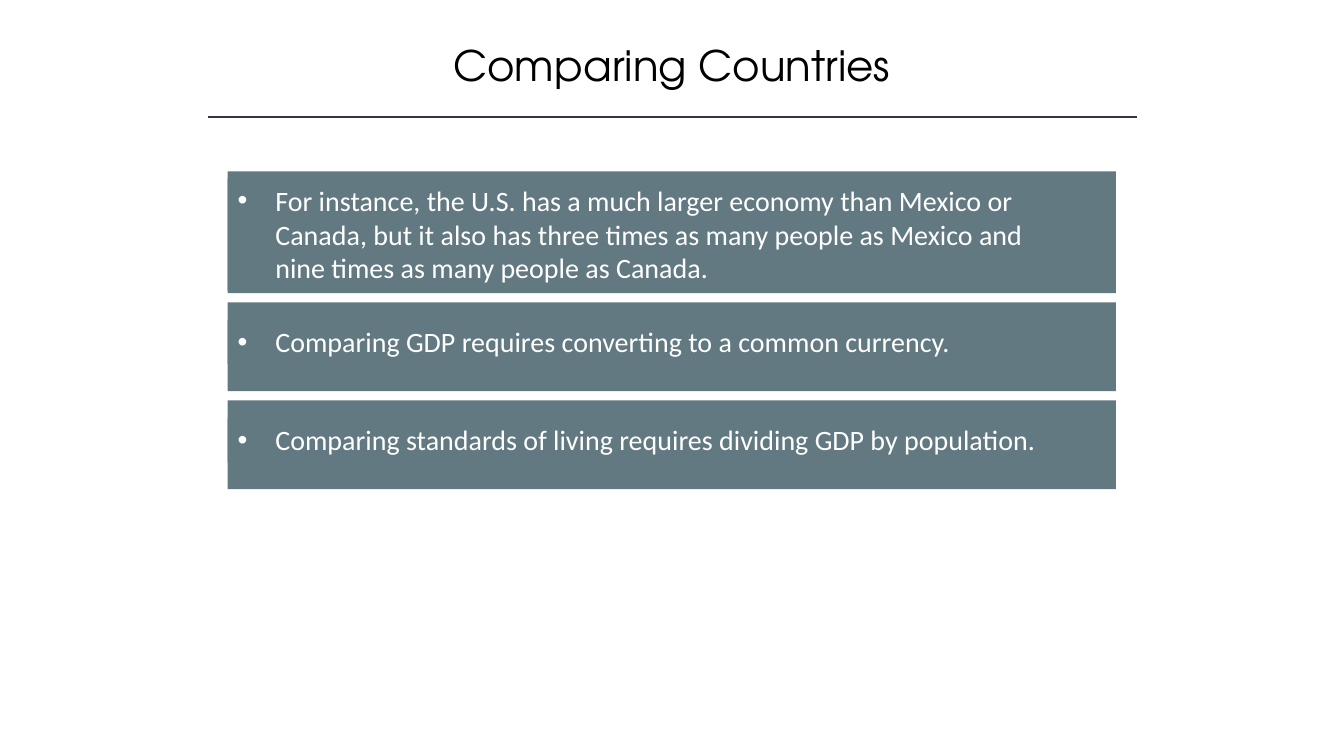
from lxml import etree
from pptx import Presentation
from pptx.dml.color import RGBColor
from pptx.enum.shapes import MSO_CONNECTOR, MSO_SHAPE
from pptx.enum.text import MSO_ANCHOR, PP_ALIGN
from pptx.oxml.ns import qn
from pptx.util import Cm, Pt

STRAIGHT = MSO_CONNECTOR.STRAIGHT
RECTANGLE = MSO_SHAPE.RECTANGLE
TOP, MIDDLE = MSO_ANCHOR.TOP, MSO_ANCHOR.MIDDLE
LEFT, CENTER = PP_ALIGN.LEFT, PP_ALIGN.CENTER
TITLE_ONLY = 5


def style_font(font, color, **formats):
    for attribute, value in formats.items():
        setattr(font, attribute, value)
    font.color.rgb = RGBColor.from_string(color)


def add_slate_rectangle(group, *box):
    rectangle = group.shapes.add_shape(RECTANGLE, *(Cm(n) for n in box))
    rectangle.shadow.inherit = False
    rectangle.fill.solid()
    rectangle.fill.fore_color.rgb = RGBColor.from_string("627981")
    rectangle.line.fill.background()
    return rectangle


deck = Presentation()
deck.slide_width, deck.slide_height = Cm(33.87), Cm(19.05)
slide = deck.slides.add_slide(deck.slide_layouts[TITLE_ONLY])

heading = slide.shapes.title
heading.left, heading.top, heading.width, heading.height = Cm(4.23), Cm(0.86), Cm(25.4), Cm(1.55)
heading.text_frame.text = "Comparing Countries"
heading.text_frame.vertical_anchor = MIDDLE
heading_line = heading.text_frame.paragraphs[0]
heading_line.alignment = CENTER
style_font(heading_line.font, "000000", name="TeX Gyre Adventor", size=Pt(30))

divider = slide.shapes.add_connector(STRAIGHT, Cm(5.23), Cm(2.95), Cm(28.65), Cm(2.95))
divider.line.color.rgb = RGBColor.from_string("323542")
divider.line.width = Pt(1)
etree.SubElement(divider.element.spPr, qn("a:effectLst"))

# panel height, text offset, text width, text height, wording
points = [
    (3.07, 0.18, 21.69, 2.82,
     "For instance, the U.S. has a much larger economy than Mexico or Canada, but it also has "
     "three times as many people as Mexico and nine times as many people as Canada."),
    (2.24, 0.44, 22.12, 1.12, "Comparing GDP requires converting to a common currency."),
    (2.24, 0.44, 21.69, 1.12, "Comparing standards of living requires dividing GDP by population."),
]
panel_left, panel_width, panel_gap = 5.74, 22.38, 0.23
panel_top = 4.32
for panel_height, offset, text_width, text_height, wording in points:
    group = slide.shapes.add_group_shape()
    add_slate_rectangle(group, panel_left, panel_top, panel_width, panel_height)
    statement = add_slate_rectangle(group, panel_left, panel_top + offset, text_width, text_height)
    frame = statement.text_frame
    frame.word_wrap = True
    frame.vertical_anchor = TOP
    frame.text = wording
    bullet_point = frame.paragraphs[0]
    bullet_point.alignment = LEFT
    properties = bullet_point._p.get_or_add_pPr()
    properties.set("marL", str(Cm(0.95)))
    properties.set("indent", str(-Cm(0.95)))
    etree.SubElement(properties, qn("a:buFont"), typeface="Arial")
    etree.SubElement(properties, qn("a:buChar"), char="•")
    style_font(bullet_point.font, "FFFFFF", name="Calibri", size=Pt(20))
    panel_top += panel_height + panel_gap

deck.save("out.pptx")
